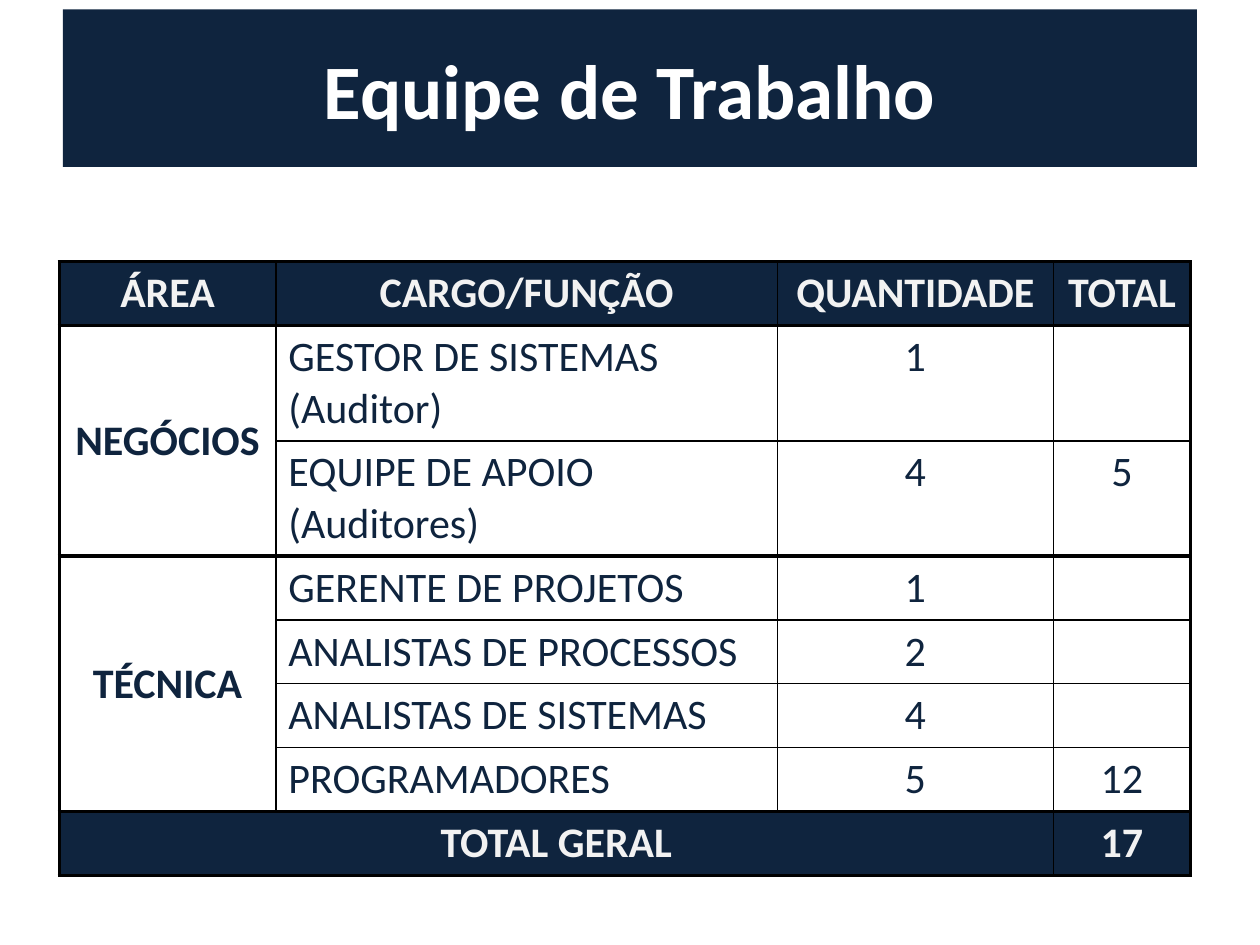
from lxml import etree
from pptx import Presentation
from pptx import util as u
from pptx.dml.color import RGBColor
from pptx.enum import shapes, text
from pptx.oxml.ns import qn

PAGE_WIDTH, PAGE_HEIGHT = u.Inches(10), u.Inches(7.5)
COLORS = {"navy": "0F243E", "white": "FFFFFF", "pale": "F2F2F2", "line": "000000"}
FONT = "Calibri"
THIN, THICK = 1, 2.25

COLUMN_SHARES = (0.1915, 0.4432, 0.2439, 0.1214)
ROWS = (
    ("ÁREA", "CARGO/FUNÇÃO", "QUANTIDADE", "TOTAL"),
    ("NEGÓCIOS", "GESTOR DE SISTEMAS (Auditor)", "1", ""),
    ("", "EQUIPE DE APOIO (Auditores)", "4", "5"),
    ("TÉCNICA", "GERENTE DE PROJETOS", "1", ""),
    ("", "ANALISTAS DE PROCESSOS", "2", ""),
    ("", "ANALISTAS DE SISTEMAS", "4", ""),
    ("", "PROGRAMADORES", "5", "12"),
    ("TOTAL GERAL", "", "", "17"),
)
ROW_HEIGHT = u.Inches(0.41)
LAST_ROW, LAST_COLUMN = len(ROWS) - 1, len(COLUMN_SHARES) - 1
# Merged blocks as (top, left, bottom, right), edges counted in grid lines
BLOCKS = ((1, 0, 3, 1), (3, 0, 7, 1), (LAST_ROW, 0, LAST_ROW + 1, LAST_COLUMN))
THICK_ROW_LINES = {0, 1, 3, LAST_ROW, LAST_ROW + 1}
THICK_COLUMN_LINES = {0, LAST_COLUMN + 1}


def share_box(left, top, width, height):
    """Turn shares of the page into lengths."""
    return (int(left * PAGE_WIDTH), int(top * PAGE_HEIGHT),
            int(width * PAGE_WIDTH), int(height * PAGE_HEIGHT))


def write_text(frame, words, size, color, bold, align):
    para = frame.paragraphs[0]
    para.alignment = align
    span = para.add_run()
    span.text = words
    for name, value in {"name": FONT, "size": u.Pt(size), "bold": bold}.items():
        setattr(span.font, name, value)
    span.font.color.rgb = RGBColor.from_string(COLORS[color])


def add_title(page, box):
    banner = page.shapes.add_shape(shapes.MSO_SHAPE.RECTANGLE, *box)
    banner.shadow.inherit = False
    banner.fill.solid()
    banner.fill.fore_color.rgb = RGBColor.from_string(COLORS["navy"])
    banner.line.fill.background()
    banner.text_frame.word_wrap = True
    banner.text_frame.vertical_anchor = text.MSO_ANCHOR.MIDDLE
    write_text(banner.text_frame, "Equipe de Trabalho", 44, "white", True,
               text.PP_ALIGN.CENTER)


def block_of(row, column):
    """Return the merged block holding a cell, or the cell's own bounds."""
    for top, left, bottom, right in BLOCKS:
        if top <= row < bottom and left <= column < right:
            return top, left, bottom, right
    return row, column, row + 1, column + 1


def draw_borders(cell, row, column):
    """Rule the cell's sides, except those inside a merged block."""
    top, left, bottom, right = block_of(row, column)
    sides = (
        ("a:lnL", column, left, THICK_COLUMN_LINES),
        ("a:lnR", column + 1, right, THICK_COLUMN_LINES),
        ("a:lnT", row, top, THICK_ROW_LINES),
        ("a:lnB", row + 1, bottom, THICK_ROW_LINES),
    )
    properties = cell._tc.get_or_add_tcPr()
    position = 0
    for tag, grid_line, block_edge, thick_lines in sides:
        outer = grid_line == block_edge
        width = THICK if grid_line in thick_lines else THIN
        border = etree.Element(qn(tag), w=str(u.Pt(width) if outer else 0))
        if outer:
            fill = etree.SubElement(border, qn("a:solidFill"))
            etree.SubElement(fill, qn("a:srgbClr"), val=COLORS["line"])
        else:
            etree.SubElement(border, qn("a:noFill"))
        properties.insert(position, border)
        position += 1


def fill_cell(cell, row, column, words):
    banded = row in (0, LAST_ROW)
    if banded:
        cell.fill.solid()
        cell.fill.fore_color.rgb = RGBColor.from_string(COLORS["navy"])
    else:
        cell.fill.background()
    if cell.is_merge_origin:
        cell.vertical_anchor = text.MSO_ANCHOR.MIDDLE
    if words:
        is_role = column == 1 and not banded
        align = text.PP_ALIGN.LEFT if is_role else text.PP_ALIGN.CENTER
        write_text(cell.text_frame, words, 24, "pale" if banded else "navy",
                   banded or column == 0, align)
    draw_borders(cell, row, column)


def add_team_table(page, box):
    left, top, width, height = box
    frame = page.shapes.add_table(len(ROWS), len(COLUMN_SHARES), left, top,
                                  width, ROW_HEIGHT * len(ROWS))
    table = frame.table
    for flag in ("first_row", "horz_banding"):
        setattr(table, flag, False)
    for column, share in zip(table.columns, COLUMN_SHARES):
        column.width = int(width * share)
    for first_row, first_column, end_row, end_column in BLOCKS:
        table.cell(first_row, first_column).merge(
            table.cell(end_row - 1, end_column - 1))
    for row, entries in enumerate(ROWS):
        for column, words in enumerate(entries):
            fill_cell(table.cell(row, column), row, column, words)
    frame.height = height


def main():
    deck = Presentation()
    deck.slide_width, deck.slide_height = PAGE_WIDTH, PAGE_HEIGHT
    page = deck.slides.add_slide(deck.slide_layouts[6])
    add_title(page, share_box(0.05, 0.01, 0.9, 1 / 6))
    add_team_table(page, share_box(0.047, 0.277, 0.898, 0.64))
    deck.save("out.pptx")


if __name__ == "__main__":
    main()
